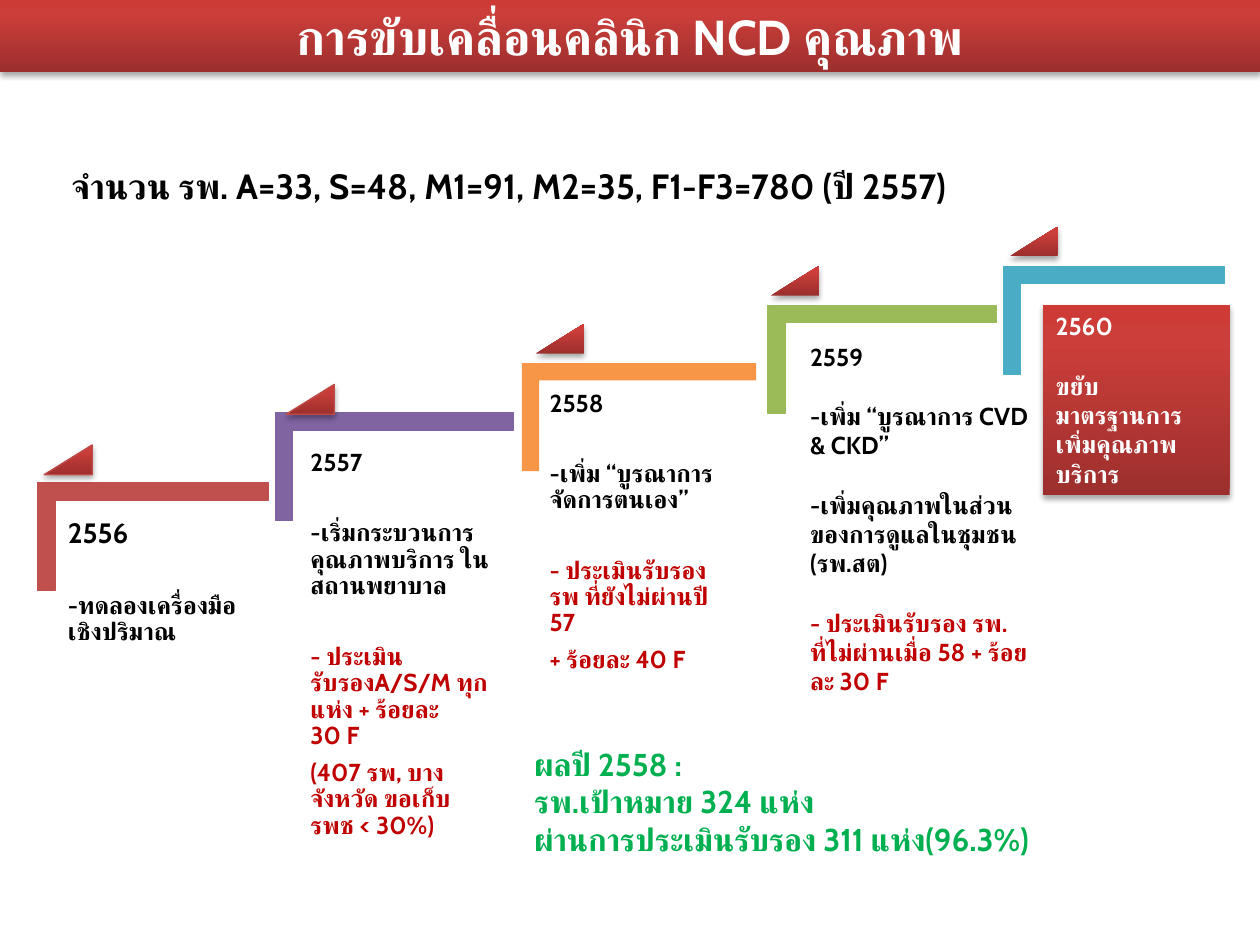
import copy

import lxml.etree
import pptx
import pptx.dml.color
import pptx.enum.shapes
import pptx.enum.text
import pptx.oxml.ns
import pptx.util

Cm = pptx.util.Cm
Pt = pptx.util.Pt
SHAPE = pptx.enum.shapes.MSO_SHAPE
ALIGN = pptx.enum.text.PP_ALIGN
ANCHOR = pptx.enum.text.MSO_ANCHOR
qn = pptx.oxml.ns.qn

COLORS = {
    "black": "000000", "white": "FFFFFF", "note": "C00000", "result": "00B050",
    "dark": "9C2F2D", "mid": "CB3E3A", "light": "CE3B37", "edge": "BF4C48",
    "red": "C0504D", "purple": "8064A2", "orange": "F79646",
    "green": "9BBB59", "blue": "4BACC6",
}


def rgb(name):
    return pptx.dml.color.RGBColor.from_string(COLORS[name])


def write(par, text, size=14, color="black", align=ALIGN.LEFT, line=1.0, after=0):
    """Fill a paragraph; a vertical tab in the text is a line break."""
    par.text = text
    par.alignment = align
    par.line_spacing = line
    par.space_before = Pt(0)
    par.space_after = Pt(after)
    for run in par.runs:
        font = run.font
        font.name, font.size, font.bold = "Cabin", Pt(size), True
        font.color.rgb = rgb(color)
        props = run._r.get_or_add_rPr()
        lxml.etree.SubElement(props, qn("a:cs"), typeface="Cabin")
    for gap in par._p.findall(qn("a:br")):
        gap.append(copy.deepcopy(par.runs[0]._r.rPr))


class Deck:
    def __init__(self):
        self.file = pptx.Presentation()
        self.file.slide_width, self.file.slide_height = Cm(25.4), Cm(19.05)
        self.slide = self.file.slides.add_slide(self.file.slide_layouts[5])

    def place(self, shape, box):
        shape.left, shape.top, shape.width, shape.height = map(Cm, box)

    def fill(self, shape, rows, pad=(0.25, 0.13), anchor=ANCHOR.TOP, **style):
        """Write rows of (text, format) into a shape."""
        frame = shape.text_frame
        frame.word_wrap = True
        frame.auto_size = pptx.enum.text.MSO_AUTO_SIZE.NONE
        frame.vertical_anchor = anchor
        frame.margin_left = frame.margin_right = Cm(pad[0])
        frame.margin_top = frame.margin_bottom = Cm(pad[1])
        for i, (text, form) in enumerate(rows):
            par = frame.add_paragraph() if i else frame.paragraphs[0]
            write(par, text, **{**style, **form})

    def gloss(self, shape):
        """Give a shape the red gradient and a soft shadow."""
        shape.fill.gradient()
        shape.fill.gradient_angle = 90
        stops = shape._element.spPr.find(qn("a:gradFill")).find(qn("a:gsLst"))
        stops.insert(1, copy.deepcopy(stops[0]))
        looks = [(0, "dark"), (0.8, "mid"), (1, "light")]
        for stop, (spot, name) in zip(shape.fill.gradient_stops, looks):
            stop.position = spot
            stop.color.rgb = rgb(name)
        shape.shadow.inherit = False
        effects = shape._element.spPr.find(qn("a:effectLst"))
        outer = lxml.etree.SubElement(
            effects, qn("a:outerShdw"), blurRad="40000", dist="23000",
            dir="5400000", rotWithShape="0")
        tint = lxml.etree.SubElement(outer, qn("a:srgbClr"), val=COLORS["black"])
        lxml.etree.SubElement(tint, qn("a:alpha"), val="35000")

    def edge(self, shape, color):
        if color:
            shape.line.color.rgb = rgb(color)
            shape.line.width = Pt(0.75)
        else:
            shape.line.fill.background()

    def title(self, text, box):
        shape = self.slide.shapes.title
        self.place(shape, box)
        self.gloss(shape)
        self.fill(shape, [(text, {})], anchor=ANCHOR.MIDDLE,
                  size=28, color="white", align=ALIGN.CENTER)

    def label(self, box, rows, **style):
        shape = self.slide.shapes.add_textbox(*map(Cm, box))
        self.fill(shape, rows, **style)

    def panel(self, box, rows, **style):
        shape = self.slide.shapes.add_shape(SHAPE.RECTANGLE, *map(Cm, box))
        self.gloss(shape)
        self.edge(shape, None)
        self.fill(shape, rows, **style)

    def stair(self, left, top, wide, color, edge):
        """Draw a step: an L turned a quarter, given by its turned frame."""
        high = 2.18
        shift = (wide - high) / 2
        box = left + shift, top - shift, high, wide
        shape = self.slide.shapes.add_shape(SHAPE.CORNER, *map(Cm, box))
        shape.rotation = 90
        shape.adjustments[0] = shape.adjustments[1] = 0.16
        shape.shadow.inherit = False
        shape.fill.solid()
        shape.fill.fore_color.rgb = rgb(color)
        self.edge(shape, edge)

    def flag(self, left, top, edge):
        box = left, top, 0.97, 0.6
        shape = self.slide.shapes.add_shape(SHAPE.ISOSCELES_TRIANGLE, *map(Cm, box))
        shape.adjustments[0] = 1
        self.gloss(shape)
        self.edge(shape, edge)


def main():
    deck = Deck()
    deck.title("การขับเคลื่อนคลินิก NCD คุณภาพ", (0, 0, 25.4, 1.45))
    deck.label((1.19, 3.18, 22.43, 1.12),
               [("จำนวน รพ. A=33, S=48, M1=91, M2=35, F1-F3=780 (ปี 2557)", {})],
               size=20)

    stairs = [
        (0.76, 9.73, 4.65, "red", "red"),
        (5.55, 8.32, 4.8, "purple", "purple"),
        (10.52, 7.32, 4.72, "orange", None),
        (15.48, 6.16, 4.6, "green", "green"),
        (20.23, 5.37, 4.45, "blue", "blue"),
    ]
    for stair in stairs:
        deck.stair(*stair)
    flags = [(0.89, 8.97, "edge"), (5.77, 7.75, "edge"), (10.8, 6.53, None),
             (15.54, 5.36, None), (20.35, 4.57, None)]
    for flag in flags:
        deck.flag(*flag)

    wide, note = {"after": 25}, {"color": "note"}
    tight = {"line": 0.9, "after": 6}
    deck.label((1.19, 10.29, 4.09, 1.5), [
        ("2556", {"size": 16, **wide}),
        ("-ทดลองเครื่องมือเชิงปริมาณ", {}),
    ], pad=(0.18, 0.18), **tight)
    deck.label((6.1, 8.92, 4.04, 1.5), [
        ("2557", wide),
        ("-เริ่มกระบวนการคุณภาพบริการ ในสถานพยาบาล", wide),
        ("- ประเมินรับรองA/S/M ทุกแห่ง + ร้อยละ\v30 F", note),
        ("(407 รพ, บางจังหวัด ขอเก็บ รพช < 30%)", note),
    ], pad=(0.16, 0.16), **tight)
    deck.label((10.92, 7.72, 4.09, 2.13), [
        ("2558", wide),
        ("-เพิ่ม “บูรณาการจัดการตนเอง”", wide),
        ("- ประเมินรับรอง\vรพ ที่ยังไม่ผ่านปี 57", note),
        ("+ ร้อยละ 40 F", note),
    ], pad=(0.16, 0.16), **tight)
    deck.label((16.08, 6.76, 4.95, 7.44), [
        ("2559", {}),
        ("-เพิ่ม “บูรณาการ CVD & CKD”", {}),
        ("-เพิ่มคุณภาพในส่วนของการดูแลในชุมชน (รพ.สต)", {}),
        ("- ประเมินรับรอง รพ.\vที่ไม่ผ่านเมื่อ 58 + ร้อยละ 30 F", note),
    ], after=17)
    deck.panel((21.03, 6.15, 3.76, 3.84), [
        ("2560", {"after": 17}),
        ("ขยับ", {}),
        ("มาตรฐานการเพิ่มคุณภาพบริการ", {}),
    ], color="white")
    deck.label((10.52, 14.88, 13.11, 2.57), [
        ("ผลปี 2558 :", {}),
        ("รพ.เป้าหมาย 324 แห่ง", {}),
        ("ผ่านการประเมินรับรอง 311 แห่ง(96.3%)", {}),
    ], size=18, color="result")
    deck.file.save("out.pptx")


if __name__ == "__main__":
    main()
